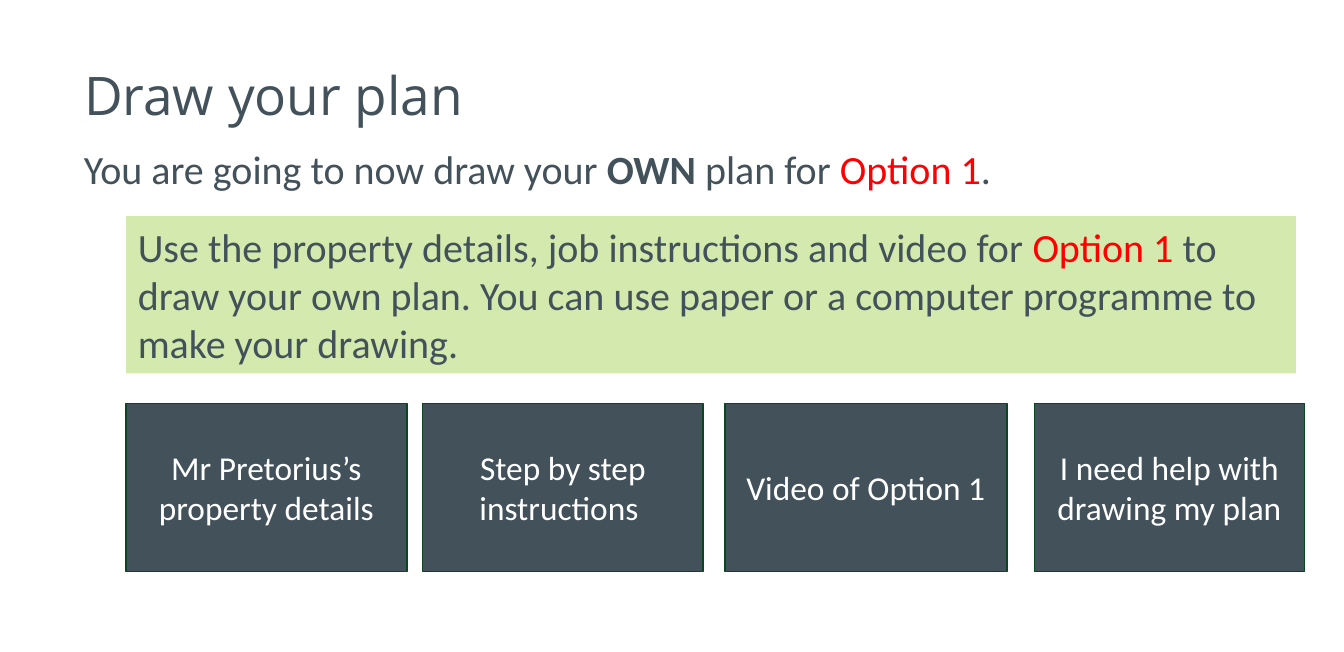
"""Build the 'Draw your plan' slide with its task box and four option buttons."""
from pptx import Presentation
from pptx.dml.color import RGBColor
from pptx.enum.shapes import MSO_SHAPE
from pptx.enum.text import MSO_ANCHOR as Anchor, MSO_AUTO_SIZE as AutoSize, PP_ALIGN as Align
from pptx.util import Inches, Pt

COLORS = {"slate": "43525A", "red": "FF0000", "lime": "D3E9AD",
          "green": "094724", "white": "FFFFFF"}

TITLE = [("Draw your plan", {})]
INTRO = [
    ("You are going to now draw your ", {}),
    ("OWN", {"bold": True}),
    (" plan for ", {}),
    ("Option 1", {"color": "red"}),
    (".", {}),
]
TASK = [
    ("Use the property details, job instructions and video for ", {}),
    ("Option 1 ", {"color": "red"}),
    ("to draw your own plan. You can use paper or a computer programme "
     "to make your drawing.", {}),
]
BUTTONS = [
    ("Mr Pretorius’s property details", 1.05, 2.34),
    ("Step by step instructions ", 3.52, 2.34),
    ("Video of Option 1", 6.04, 2.35),
    ("I need help with drawing my plan", 8.62, 2.25),
]
BUTTON_TOP, BUTTON_HEIGHT = 3.36, 1.4


def rgb(name):
    """Return the named colour."""
    return RGBColor.from_string(COLORS[name])


def write(s, runs, size=24, font="Calibri", color="slate", align=Align.LEFT,
          anchor=Anchor.TOP, spacing=1.0):
    """Fill a shape with one paragraph of formatted runs."""
    tf = s.text_frame
    tf.word_wrap = True
    tf.auto_size = AutoSize.NONE
    tf.vertical_anchor = anchor
    p = tf.paragraphs[0]
    p.alignment = align
    p.line_spacing = spacing
    p.space_before = Pt(0)
    for text, extra in runs:
        r = p.add_run()
        r.text = text
        r.font.name = font
        r.font.size = Pt(size)
        r.font.bold = extra.get("bold", False)
        r.font.color.rgb = rgb(extra.get("color", color))


def add_box(slide, box, fill, line=None):
    """Add a flat rectangle with an optional outline."""
    s = slide.shapes.add_shape(MSO_SHAPE.RECTANGLE, *map(Inches, box))
    s.shadow.inherit = False
    s.fill.solid()
    s.fill.fore_color.rgb = rgb(fill)
    if line:
        s.line.color.rgb = rgb(line)
        s.line.width = Pt(1)
    else:
        s.line.fill.background()
    return s


def main():
    """Lay out the slide and save it."""
    prs = Presentation()
    prs.slide_width, prs.slide_height = Inches(11.2), Inches(5.43)
    slide = prs.slides.add_slide(prs.slide_layouts[5])

    title = slide.shapes.title
    title.left, title.top = Inches(0.6), Inches(0.29)
    title.width, title.height = Inches(8.33), Inches(1.05)
    write(title, TITLE, size=31.9, font="Open Sans", anchor=Anchor.MIDDLE, spacing=0.9)

    intro = slide.shapes.add_textbox(*map(Inches, (0.6, 1.2, 10.21, 1.99)))
    write(intro, INTRO, spacing=0.9)

    write(add_box(slide, (1.05, 1.8, 9.75, 1.31), "lime"), TASK)

    for label, left, width in BUTTONS:
        button = add_box(slide, (left, BUTTON_TOP, width, BUTTON_HEIGHT), "slate", "green")
        write(button, [(label, {})], size=20, color="white",
              align=Align.CENTER, anchor=Anchor.MIDDLE)

    prs.save("out.pptx")


if __name__ == "__main__":
    main()
